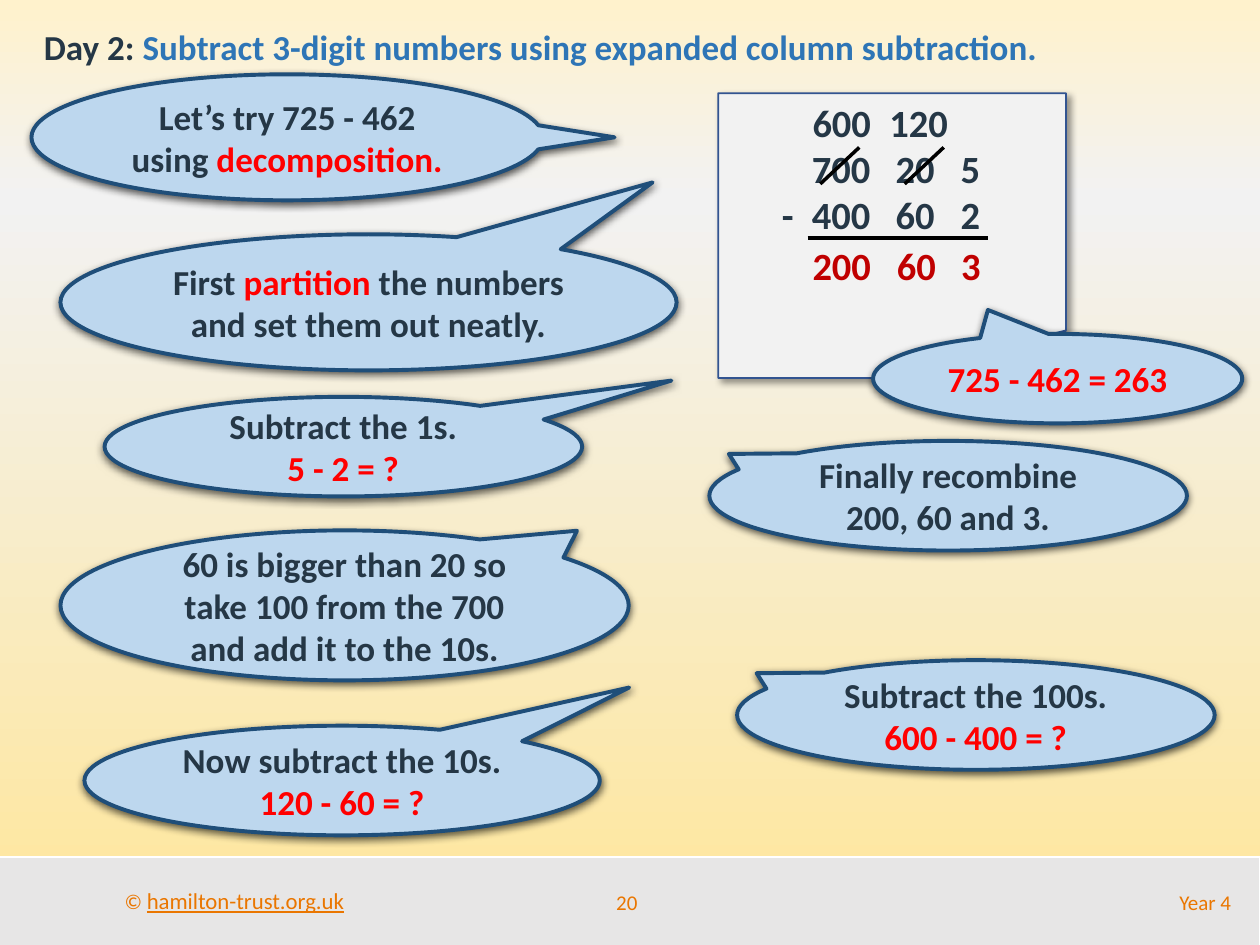
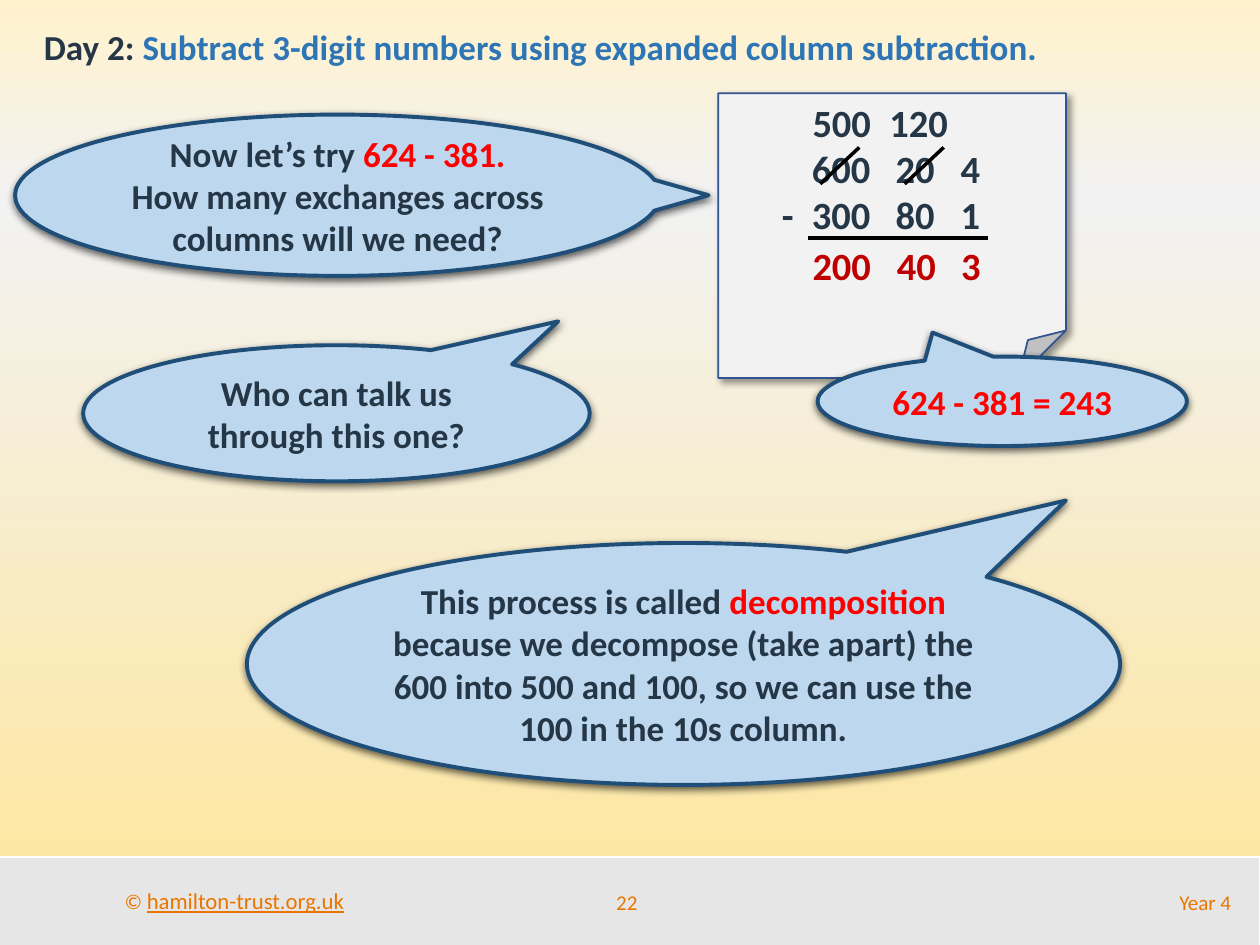
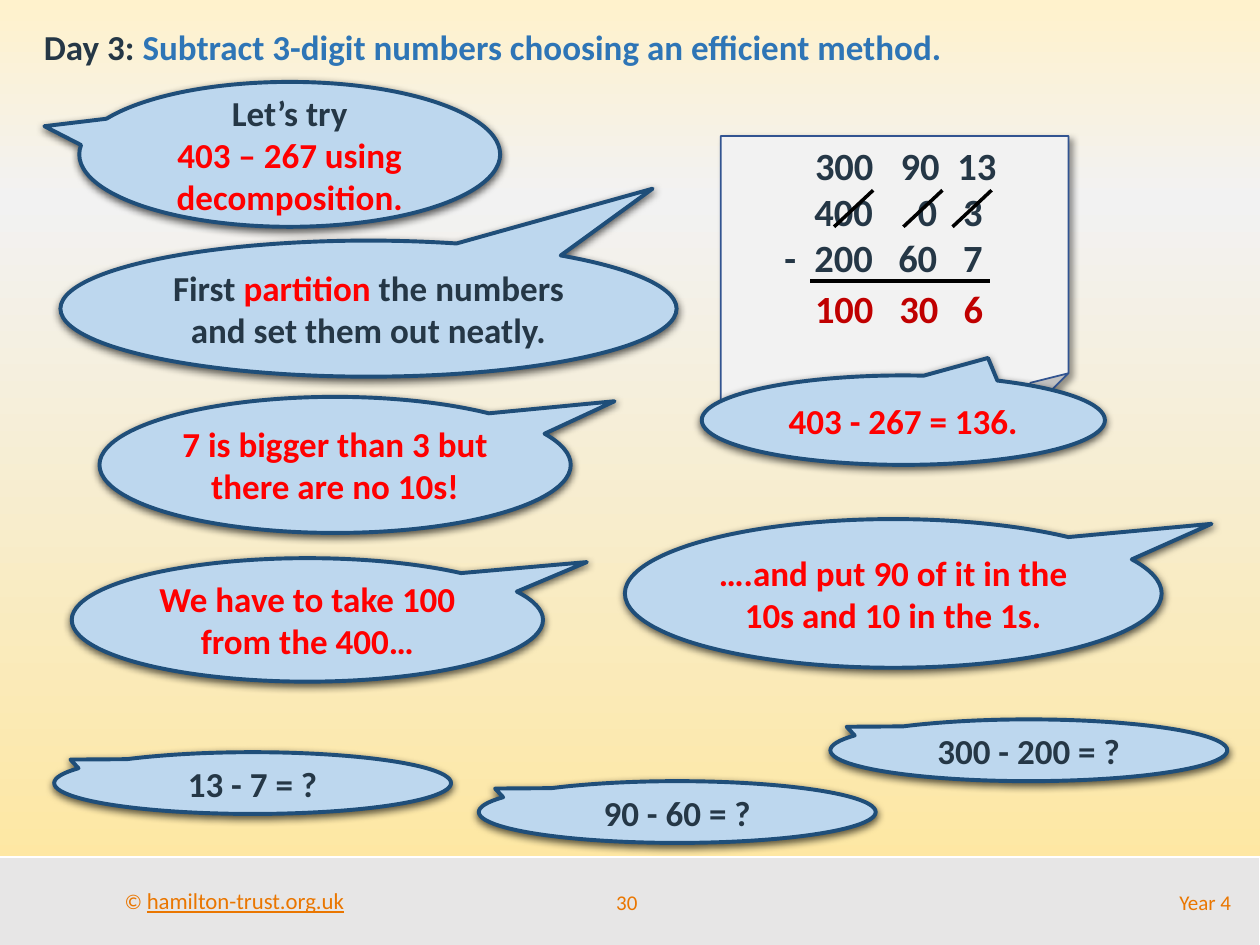
from copy import deepcopy
from dataclasses import dataclass

from lxml.etree import SubElement as Sub
from pptx import Presentation
from pptx.dml.color import RGBColor as RGB
from pptx.enum.shapes import MSO_CONNECTOR as Link, MSO_SHAPE as Kind
from pptx.enum.text import MSO_ANCHOR as Anchor, PP_ALIGN as Align
from pptx.oxml.ns import qn
from pptx.util import Inches, Pt


@dataclass(frozen=True)
class Theme:
    font: str = "Calibri"
    ink: str = "253746"
    red: str = "FF0000"
    blue: str = "2E75B6"
    answer: str = "C00000"
    orange: str = "EA7600"
    bubble: str = "BDD7EE"
    rim: str = "1F4E79"
    note: str = "F2F2F2"
    edge: str = "325491"
    band: str = "E7E6E6"
    white: str = "FFFFFF"
    black: str = "000000"
    sky: tuple = ((0, "FFF2CC"), (0.21, "F2F2F2"), (1, "FFE699"))
    body: int = 20
    sum: int = 22
    foot: int = 12
    link: int = 13


T = Theme()

# Words between asterisks take the accent format.
PARTITION = "First *partition* the numbers and set them out neatly."
COLUMN = "Day 2: *Subtract 3-digit numbers using expanded column subtraction.*"
EFFICIENT = "Day 3: *Subtract 3-digit numbers choosing an efficient method.*"

# Tail tips, as shares of the bubble's size from its centre
SUM_TIP = (-0.189, -0.768)
HIGH_TIP = (0.461, -0.882)
LEFT_TIP = (-0.459, -0.381)
SIDE_TIP = (0.593, -0.468)
TALK_TIP = (0.438, -0.676)

# Carried numbers and slashes give their left offsets from the note.
SLIDES = [
    dict(
        page=20, title=COLUMN, note=(5.7, 0.74),
        rows=["\t\t700\t20\t5", "\t-\t400\t60\t2"], answer=["200", "60", "3"],
        carry=[("600", 0.65), ("120", 1.26)], slashes=[0.81, 1.48],
        bubbles=[
            ((0.25, 0.59, 4.06, 1), (0.64, 0),
             ["Let’s try 725 - 462 using *decomposition.*"]),
            ((6.93, 2.65, 2.93, 0.71), SUM_TIP, ["*725 - 462 = 263*"]),
            ((0.83, 3.15, 3.79, 0.79), (0.687, -0.664),
             ["Subtract the 1s.", "*5 - 2 = ?*"]),
            ((0.48, 4.21, 4.51, 1.19), (0.409, -0.498),
             ["60 is bigger than 20 so take 100 from the 700 and add it to the 10s."]),
            ((0.67, 5.76, 4.09, 0.87), (0.557, -0.848),
             ["Now subtract the 10s. *120 - 60 = ?*"]),
            ((5.85, 5.24, 3.79, 0.87), LEFT_TIP,
             ["Subtract the 100s. *600 - 400 = ?*"]),
            ((0.48, 1.86, 4.89, 1.08), HIGH_TIP, [PARTITION]),
            ((5.63, 3.5, 3.79, 0.87), LEFT_TIP,
             ["Finally recombine 200, 60 and 3."]),
        ],
    ),
    dict(
        page=22, title=COLUMN, note=(5.7, 0.74),
        rows=["\t\t600\t20\t4", "\t-\t300\t80\t1"], answer=["200", "40", "3"],
        carry=[("500", 0.65), ("120", 1.26)], slashes=[0.81, 1.48],
        bubbles=[
            ((6.49, 2.83, 2.93, 0.71), SUM_TIP, ["*624 - 381 = 243*"]),
            ((0.66, 2.74, 4.02, 1.08), TALK_TIP,
             ["Who can talk us through this one?"]),
            ((0.12, 0.91, 5.12, 1.28), (0.575, 0),
             ["Now let’s try *624 - 381.*",
              "How many exchanges across columns will we need?"]),
            ((1.96, 4.31, 6.93, 1.92), TALK_TIP,
             ["This process is called *decomposition* because we decompose "
              "(take apart) the 600 into 500 and 100, so we can use the 100 "
              "in the 10s column."]),
        ],
    ),
    dict(
        page=30, title=EFFICIENT, note=(5.72, 1.08),
        rows=["\t\t400\t0\t3", "\t-\t200\t60\t7"], answer=["100", "30", "6"],
        carry=[("300", 0.65), ("90", 1.33), ("13", 1.78)],
        slashes=[0.9, 1.45, 1.84],
        bubbles=[
            ((0.79, 3.15, 3.74, 1.08), SIDE_TIP,
             ["*7 is bigger than 3 but there are no 10s!*"]),
            ((0.43, 5.97, 3.15, 0.49), LEFT_TIP, ["13 - 7 = ?"]),
            ((3.8, 6.2, 3.15, 0.49), LEFT_TIP, ["90 - 60 = ?"]),
            ((6.59, 5.71, 3.15, 0.49), LEFT_TIP, ["300 - 200 = ?"]),
            ((4.96, 4.12, 4.26, 1.18), SIDE_TIP,
             ["*….and put 90 of it in the 10s and 10 in the 1s.*"]),
            ((5.57, 2.98, 3.2, 0.71), (0.21, -0.696), ["*403 - 267 = 136.*"]),
            ((0.63, 0.65, 3.34, 1.15), (-0.583, -0.194),
             ["Let’s try", "*403 – 267 using decomposition.*"]),
            ((0.57, 4.43, 3.74, 0.98), SIDE_TIP,
             ["*We have to take 100 from the 400…*"]),
            ((0.48, 1.91, 4.89, 1.08), HIGH_TIP, [PARTITION]),
        ],
    ),
]

TABS = (0.5, 1.11, 1.62, 1.98)
ANSWERS = (0.65, 1.32, 1.83)
NOTE_SIZE = (2.76, 2.26)


def write(shape, paras, size=T.body, color=T.ink, bold=True, align=Align.LEFT,
          anchor=Anchor.TOP, wrap=True, accent=None, tabs=()):
    """Fill a shape with paragraphs; accent holds the format of starred words."""
    frame = shape.text_frame
    frame.word_wrap = wrap
    frame.vertical_anchor = anchor
    for i, text in enumerate(paras):
        para = frame.add_paragraph() if i else frame.paragraphs[0]
        para.alignment = align
        if tabs:
            stops = Sub(para._p.get_or_add_pPr(), qn("a:tabLst"))
            for x in tabs:
                Sub(stops, qn("a:tab"), pos=str(Inches(x)), algn="r")
        for j, part in enumerate(text.split("*")):
            if not part:
                continue
            look = dict(size=size, color=color, line=None)
            if j % 2:
                look.update(accent)
            run = para.add_run()
            run.text = part
            font = run.font
            font.name, font.size, font.bold = T.font, Pt(look["size"]), bold
            font.underline = look["line"]
            font.color.rgb = RGB.from_string(look["color"])


def label(slide, box, text, **look):
    write(slide.shapes.add_textbox(*map(Inches, box)), [text], **look)


def draw(slide, kind, box, fill, line, width, shadow=None):
    """Add a preset shape; shadow is alpha %, blur pt, distance pt, angle."""
    shape = slide.shapes.add_shape(kind, *map(Inches, box))
    shape.fill.solid()
    shape.fill.fore_color.rgb = RGB.from_string(fill)
    shape.line.color.rgb = RGB.from_string(line)
    shape.line.width = Pt(width)
    shape.shadow.inherit = False
    if shadow:
        alpha, blur, dist, angle = shadow
        effects = shape._element.spPr.find(qn("a:effectLst"))
        cast = Sub(effects, qn("a:outerShdw"), blurRad=str(Pt(blur)),
                   dist=str(Pt(dist)), dir=str(angle * 60000), rotWithShape="0")
        tint = Sub(cast, qn("a:srgbClr"), val=T.black)
        Sub(tint, qn("a:alpha"), val=str(alpha * 1000))
    return shape


def rule(slide, *ends):
    line = slide.shapes.add_connector(Link.STRAIGHT, *map(Inches, ends))
    line.line.color.rgb = RGB.from_string(T.black)
    line.line.width = Pt(2)
    Sub(line._element.spPr, qn("a:effectLst"))


def paint(slide):
    """Give the slide its three-stop vertical gradient."""
    fill = slide.background.fill
    fill.gradient()
    fill.gradient_angle = 270
    stops = slide._element.find(".//" + qn("a:gsLst"))
    stops.append(deepcopy(stops[0]))
    for stop, (place, color) in zip(fill.gradient_stops, T.sky):
        stop.position = place
        stop.color.rgb = RGB.from_string(color)


def frame(slide, page, title):
    """Add the background, footer and title."""
    paint(slide)
    draw(slide, Kind.RECTANGLE, (-0.06, 6.8, 10.06, 0.72), T.band, T.white, 1)
    foot = dict(size=T.foot, color=T.orange, bold=False)
    label(slide, (0.89, 6.99, 1.97, 0.32), "© *hamilton-trust.org.uk*",
          wrap=False, accent=dict(size=T.link, line=True), **foot)
    foot["anchor"] = Anchor.MIDDLE
    label(slide, (4.58, 6.96, 0.79, 0.4), str(page), align=Align.CENTER, **foot)
    label(slide, (5.8, 6.96, 4.07, 0.4), "Year 4", align=Align.RIGHT, **foot)
    label(slide, (0.25, 0.15, 9.61, 0.44), title, accent=dict(color=T.blue))


def work(slide, note, rows, answer, carry, slashes):
    """Set out the column subtraction on its note."""
    left, top = note
    sheet = draw(slide, Kind.FOLDED_CORNER, (*note, *NOTE_SIZE), T.note,
                 T.edge, 1, shadow=(40, 4, 3, 45))
    sheet.text_frame.margin_top = Inches(0.41)
    write(sheet, rows, size=T.sum, tabs=TABS)
    rule(slide, left + 0.71, top + 1.15, left + 2.14, top + 1.15)
    for text, x in zip(answer, ANSWERS):
        label(slide, (left + x, top + 1.13, 0.75, 0.47), text,
              size=T.sum, color=T.answer)
    for x in slashes:
        rule(slide, left + x, top + 0.72, left + x + 0.31, top + 0.43)
    for text, x in carry:
        label(slide, (left + x, top, 0.75, 0.47), text, size=T.sum)


def speak(slide, box, tip, paras):
    bubble = draw(slide, Kind.OVAL_CALLOUT, box, T.bubble, T.rim, 2.25,
                  shadow=(63, 4.5, 1.5, 90))
    for i, share in enumerate(tip):
        bubble.adjustments[i] = share
    write(bubble, paras, align=Align.CENTER, anchor=Anchor.MIDDLE,
          accent=dict(color=T.red))


def main():
    deck = Presentation()
    deck.slide_width, deck.slide_height = Inches(10), Inches(7.5)
    for item in SLIDES:
        slide = deck.slides.add_slide(deck.slide_layouts[6])
        frame(slide, item["page"], item["title"])
        work(slide, *(item[key] for key in
                      ("note", "rows", "answer", "carry", "slashes")))
        for bubble in item["bubbles"]:
            speak(slide, *bubble)
    deck.save("out.pptx")


if __name__ == "__main__":
    main()
